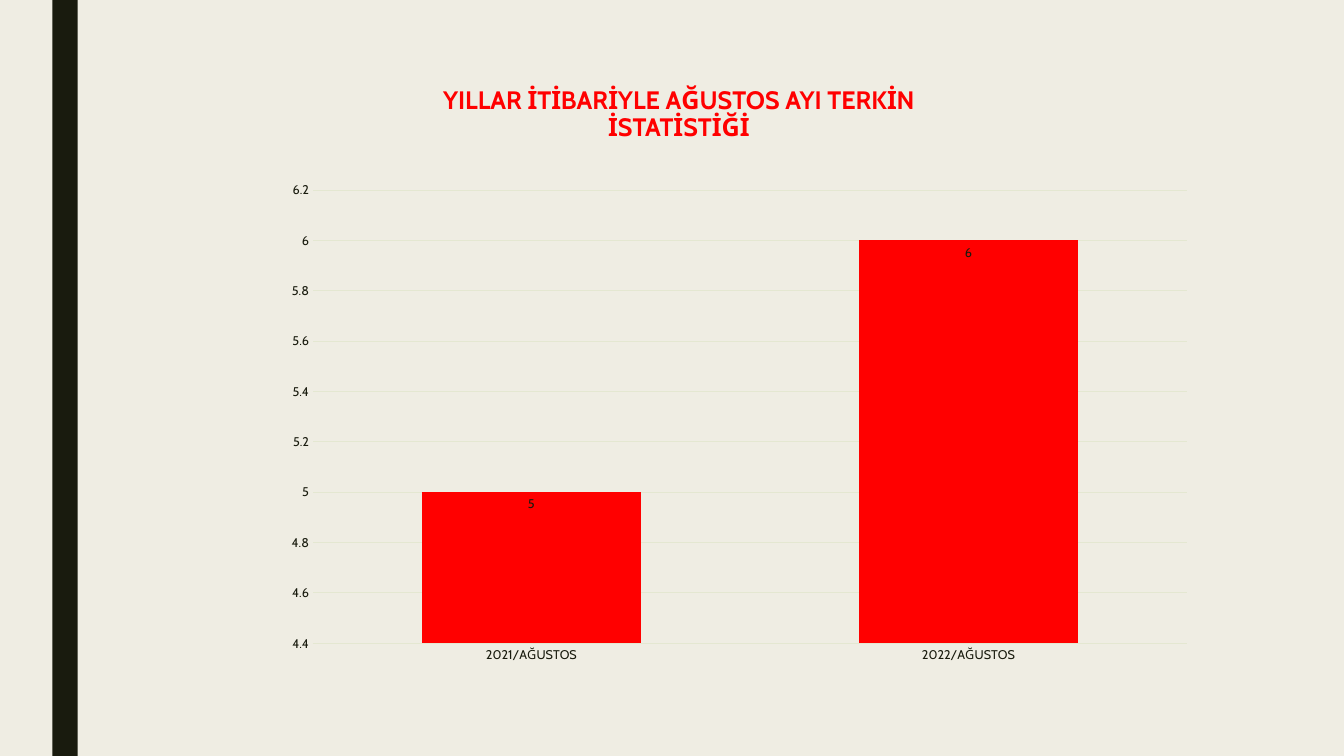
import pptx
import pptx.chart.data
import pptx.dml.color
import pptx.enum.chart
import pptx.enum.shapes
import pptx.enum.text
import pptx.util

Cm, Pt = pptx.util.Cm, pptx.util.Pt
enum = pptx.enum.chart
HUES = {"paper": "EFEDE3", "dark": "191B0E", "red": "FF0000", "grid": "E4E7D1"}
RGB = {name: pptx.dml.color.RGBColor.from_string(hue) for name, hue in HUES.items()}


def style(font, size, hue, bold=False):
    for key, value in {"name": "Cabin", "size": Pt(size), "bold": bold}.items():
        setattr(font, key, value)
    font.color.rgb = RGB[hue]


def paint(fill, hue):
    fill.solid()
    fill.fore_color.rgb = RGB[hue]


deck = pptx.Presentation()
deck.slide_width, deck.slide_height = Cm(33.87), Cm(19.05)
slide = deck.slides.add_slide(deck.slide_layouts[5])
paint(slide.background.fill, "paper")

# Side band
band = slide.shapes.add_shape(
    pptx.enum.shapes.MSO_SHAPE.RECTANGLE, Cm(1.32), 0, Cm(0.64), deck.slide_height)
band.shadow.inherit = False
paint(band.fill, "dark")
band.line.fill.background()

# Title
title = slide.shapes.title
place = {"left": 9.35, "top": 2.08, "width": 15.52, "height": 0.97}
for key, value in place.items():
    setattr(title, key, Cm(value))
frame = title.text_frame
frame.text = "YILLAR İTİBARİYLE AĞUSTOS AYI TERKİN İSTATİSTİĞİ"
form = {"word_wrap": True, "auto_size": pptx.enum.text.MSO_AUTO_SIZE.NONE,
        "vertical_anchor": pptx.enum.text.MSO_ANCHOR.TOP}
for key, value in form.items():
    setattr(frame, key, value)
line = frame.paragraphs[0]
line.alignment = pptx.enum.text.PP_ALIGN.CENTER
line.line_spacing = 0.89
style(line.runs[0].font, 18, "red", True)

# Column chart
data = pptx.chart.data.CategoryChartData()
data.categories = ["2021/AĞUSTOS", "2022/AĞUSTOS"]
data.add_series("Series 1", [5, 6])
chart = slide.shapes.add_chart(
    enum.XL_CHART_TYPE.COLUMN_CLUSTERED,
    Cm(6.88), Cm(4.34), Cm(23.5), Cm(12.62), data).chart
chart.has_legend = False
chart.has_title = False
style(chart.font, 10, "dark")

plot = chart.plots[0]
for key, value in {"gap_width": 100, "overlap": -24, "vary_by_categories": False}.items():
    setattr(plot, key, value)
bars = plot.series[0]
paint(bars.format.fill, "red")
labels = bars.data_labels
labels.show_value = True
labels.position = enum.XL_LABEL_POSITION.INSIDE_END
style(labels.font, 9, "dark")

years, scale = chart.category_axis, chart.value_axis
for axis in (years, scale):
    axis.major_tick_mark = axis.minor_tick_mark = enum.XL_TICK_MARK.NONE
    style(axis.tick_labels.font, 9, "dark")
for key, value in {"minimum_scale": 4.4, "maximum_scale": 6.2, "major_unit": 0.2,
                   "has_major_gridlines": True}.items():
    setattr(scale, key, value)
scale.format.line.fill.background()
for part in (years, scale.major_gridlines):
    part.format.line.color.rgb = RGB["grid"]
    part.format.line.width = Pt(0.75)

deck.save("out.pptx")
